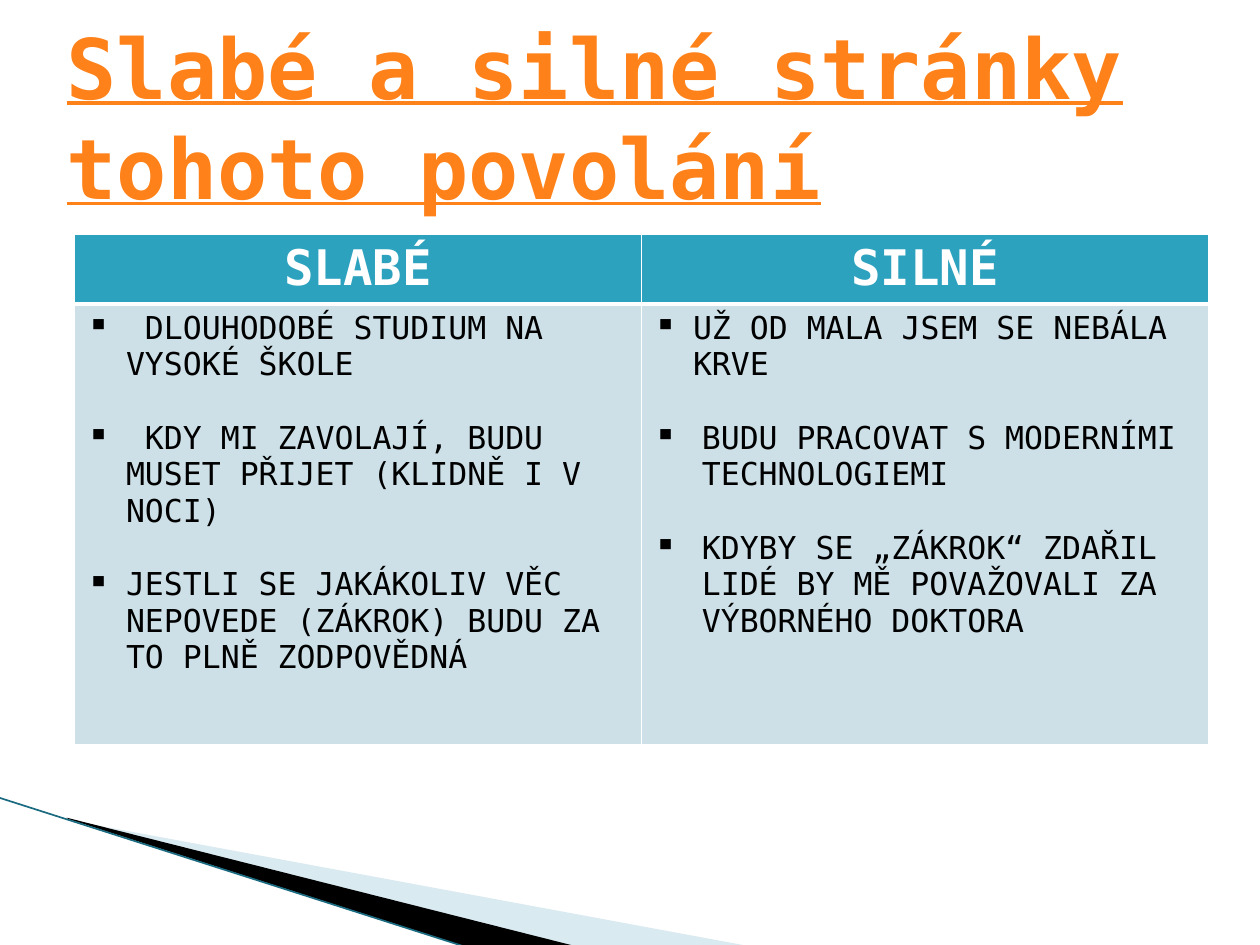
"""Build a slide comparing the weak and strong sides of a profession."""
from lxml import etree
from pptx import Presentation
from pptx import util as u
from pptx.dml.color import RGBColor
from pptx.enum import shapes, text
from pptx.oxml.ns import qn

HUES = {
    "title": "FF8119", "head": "2DA2BF", "body": "CDE0E8", "white": "FFFFFF",
    "black": "000000", "pale": "A0CBDC", "edge": "1A6A80",
}
FONT = "DejaVu Sans Mono"


def write(para, words, size, hue, bold=False, line=False, align=None, gap=0, dent=0):
    if dent:
        props = para._p.get_or_add_pPr()
        props.set("marL", str(u.Inches(dent)))
        props.set("indent", str(-u.Inches(dent)))
        etree.SubElement(props, qn("a:buChar")).set("char", "▪")
    para.alignment = align
    if gap:
        para.space_before = u.Pt(gap)
    run = para.add_run()
    run.text = words
    font = run.font
    font.name, font.size, font.bold, font.underline = FONT, u.Pt(size), bold, line
    font.color.rgb = RGBColor.from_string(HUES[hue])


def style(cell, hue, base):
    props = cell._tc.get_or_add_tcPr()
    for side, width in (("L", 1), ("R", 1), ("T", 1), ("B", base)):
        edge = etree.SubElement(props, qn(f"a:ln{side}"), w=str(u.Pt(width)))
        fill = etree.SubElement(edge, qn("a:solidFill"))
        etree.SubElement(fill, qn("a:srgbClr"), val=HUES["white"])
    cell.fill.solid()
    cell.fill.fore_color.rgb = RGBColor.from_string(HUES[hue])


deck = Presentation()
deck.slide_width, deck.slide_height = u.Inches(10), u.Inches(7.5)
slide = deck.slides.add_slide(deck.slide_layouts[6])

wedges = [
    ("pale", 40, [(0.55, 6.51), (5.95, 7.51), (4.56, 7.51), (0.55, 6.5)]),
    ("black", 100, [(0.53, 6.49), (4.57, 7.51), (3.72, 7.52), (0.54, 6.5)]),
]
for hue, alpha, spots in wedges:
    first, *rest = [(u.Inches(x), u.Inches(y)) for x, y in spots]
    pen = slide.shapes.build_freeform(*first)
    pen.add_line_segments(rest, close=True)
    wedge = pen.convert_to_shape()
    wedge.shadow.inherit = False
    wedge.line.fill.background()
    wedge.fill.solid()
    wedge.fill.fore_color.rgb = RGBColor.from_string(HUES[hue])
    if alpha < 100:
        tint = wedge._element.spPr.find(qn("a:solidFill"))[0]
        etree.SubElement(tint, qn("a:alpha"), val=str(alpha * 1000))

edge = slide.shapes.add_connector(
    shapes.MSO_CONNECTOR.STRAIGHT,
    u.Inches(-0.01), u.Inches(6.33), u.Inches(3.71), u.Inches(7.52))
edge.line.color.rgb = RGBColor.from_string(HUES["edge"])
edge.line.width = u.Pt(0.95)
etree.SubElement(edge._element.spPr, qn("a:effectLst"))

sides = [
    ("SLABÉ", [
        (" DLOUHODOBÉ STUDIUM NA VYSOKÉ ŠKOLE", 0.31),
        (" KDY MI ZAVOLAJÍ, BUDU MUSET PŘIJET (KLIDNĚ I V NOCI)", 0.31),
        ("JESTLI SE JAKÁKOLIV VĚC NEPOVEDE (ZÁKROK) BUDU ZA TO PLNĚ ZODPOVĚDNÁ", 0.31),
    ]),
    ("SILNÉ", [
        ("UŽ OD MALA JSEM SE NEBÁLA KRVE", 0.31),
        ("BUDU PRACOVAT S MODERNÍMI TECHNOLOGIEMI", 0.38),
        ("KDYBY SE „ZÁKROK“ ZDAŘIL LIDÉ BY MĚ POVAŽOVALI ZA VÝBORNÉHO DOKTORA", 0.38),
    ]),
]
table = slide.shapes.add_table(
    2, 2, u.Inches(0.59), u.Inches(1.86), u.Inches(9), u.Inches(4.02)).table
table.rows[0].height, table.rows[1].height = u.Inches(0.52), u.Inches(3.5)
for col, (name, points) in enumerate(sides):
    head, body = table.cell(0, col), table.cell(1, col)
    style(head, "head", 3)
    style(body, "body", 1)
    write(head.text_frame.paragraphs[0], name, 28, "white", bold=True,
          align=text.PP_ALIGN.CENTER)
    frame = body.text_frame
    for row, (words, dent) in enumerate(points):
        para = frame.add_paragraph() if row else frame.paragraphs[0]
        write(para, words, 18, "black", gap=21 if row else 0, dent=dent)

title = slide.shapes.add_textbox(
    u.Inches(0.43), u.Inches(0.08), u.Inches(9), u.Inches(1.68)).text_frame
title.word_wrap = True
write(title.paragraphs[0], "Slabé a silné stránky tohoto povolání", 47.7, "title",
      bold=True, line=True)

deck.save("out.pptx")
